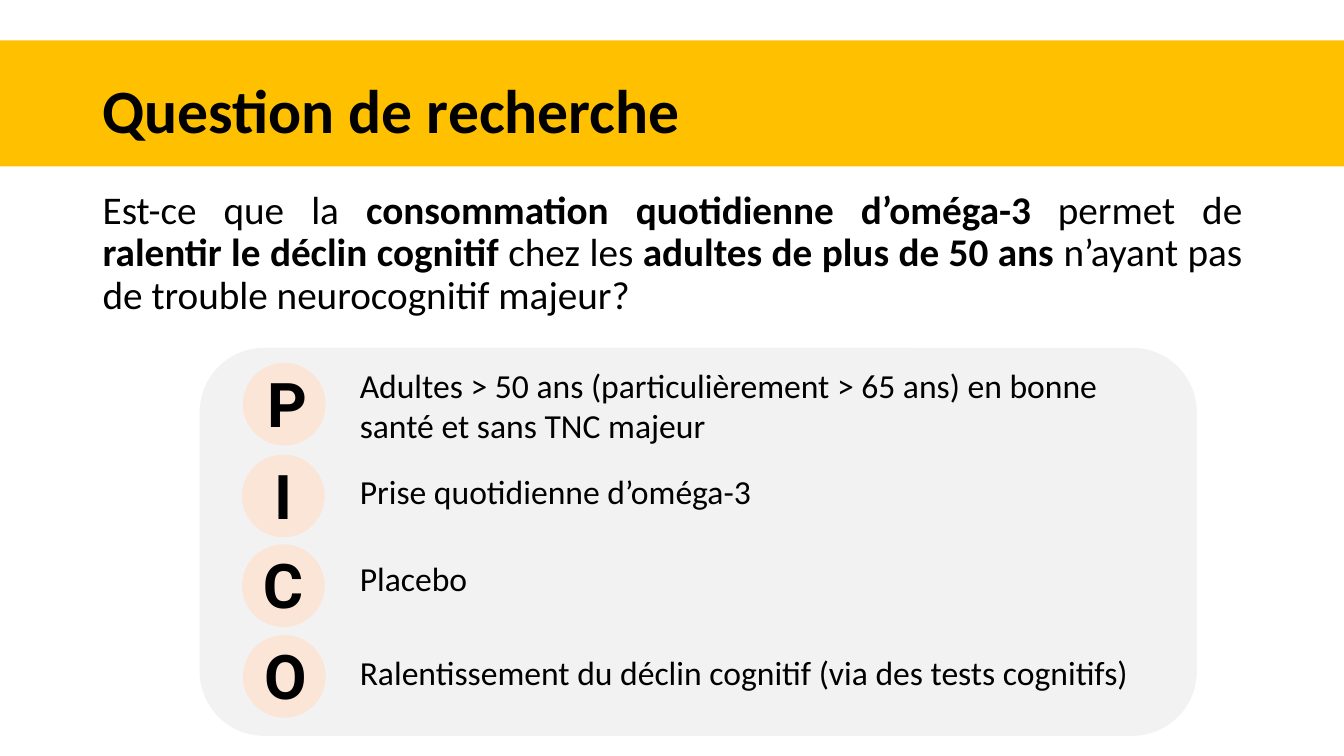
from pptx import Presentation
from pptx.dml.color import RGBColor
from pptx.enum.shapes import MSO_SHAPE
from pptx.enum.text import MSO_ANCHOR, PP_ALIGN
from pptx.util import Emu, Pt

RECTANGLE = MSO_SHAPE.RECTANGLE
ROUNDED = MSO_SHAPE.ROUNDED_RECTANGLE
CIRCLE = MSO_SHAPE.OVAL
TOP, MIDDLE = MSO_ANCHOR.TOP, MSO_ANCHOR.MIDDLE
LEFT, JUSTIFY = PP_ALIGN.LEFT, PP_ALIGN.JUSTIFY
EMU_PER_PX = 9144  # 100 px to the inch


def px(length):
    return Emu(length * EMU_PER_PX)


def color(hex_code):
    return RGBColor.from_string(hex_code)


class PicoSlide:
    BLACK, AMBER, GREY, PEACH = "000000", "FFC000", "F2F2F2", "FBE5D6"
    BODY_FONT, LETTER_FONT = "Calibri", "Roboto"

    def __init__(self, presentation):
        self.slide = presentation.slides.add_slide(presentation.slide_layouts[6])

    def shape(self, kind, box, fill):
        shape = self.slide.shapes.add_shape(kind, *map(px, box))
        shape.shadow.inherit = False
        shape.fill.solid()
        shape.fill.fore_color.rgb = color(fill)
        shape.line.fill.background()

    def text(self, box, runs, size, font=BODY_FONT, bold=False,
             anchor=TOP, align=LEFT, spacing=1.0, before=0):
        """Runs are (text, bold) pairs, or one string set in a single weight."""
        frame = self.slide.shapes.add_textbox(*map(px, box)).text_frame
        frame.word_wrap = True
        frame.vertical_anchor = anchor
        paragraph = frame.paragraphs[0]
        paragraph.alignment = align
        paragraph.line_spacing = spacing
        paragraph.space_before = Pt(before)
        paragraph.font.name = font
        paragraph.font.size = Pt(size)
        paragraph.font.color.rgb = color(self.BLACK)
        if isinstance(runs, str):
            paragraph.font.bold = bold
            paragraph.add_run().text = runs
            return
        for words, is_bold in runs:
            run = paragraph.add_run()
            run.text = words
            run.font.bold = is_bold


QUESTION = [
    ("Est-ce que la ", False),
    ("consommation quotidienne d’oméga-3 ", True),
    ("permet de ", False),
    ("ralentir le déclin cognitif ", True),
    ("chez les ", False),
    ("adultes de plus de 50 ans ", True),
    ("n’ayant pas de trouble neurocognitif majeur?", False),
]

# letter, letter left, circle left, circle top, description top and height, description
PICO = [
    ("P", 255, 241, 360, 357, 91,
     "Adultes > 50 ans (particulièrement > 65 ans) en bonne santé et sans TNC majeur"),
    ("I", 262, 240, 451, 462, 50, "Prise quotidienne d’oméga-3"),
    ("C", 251, 240, 540, 549, 50, "Placebo"),
    ("O", 252, 241, 630, 642, 50,
     "Ralentissement du déclin cognitif (via des tests cognitifs)"),
]


def main():
    presentation = Presentation()
    presentation.slide_width, presentation.slide_height = px(1333), px(750)
    page = PicoSlide(presentation)

    # Panel and title band
    page.shape(ROUNDED, (198, 345, 989, 385), page.GREY)
    page.shape(RECTANGLE, (0, 40, 1333, 125), page.AMBER)

    # Title and research question
    page.text((92, 40, 1150, 145), "Question de recherche", 44, bold=True,
              anchor=MIDDLE, spacing=0.9)
    page.text((92, 184, 1150, 175), QUESTION, 28, align=JUSTIFY,
              spacing=0.9, before=10)

    # PICO rows: circle, letter, description
    for letter, letter_x, circle_x, circle_y, detail_y, detail_h, detail in PICO:
        page.shape(CIRCLE, (circle_x, circle_y, 82, 82), page.PEACH)
        page.text((letter_x, circle_y - 2, 68, 84), letter, 44,
                  font=page.LETTER_FONT, bold=True)
        page.text((347, detail_y, 807, detail_h), detail, 24)

    presentation.save("out.pptx")


if __name__ == "__main__":
    main()
